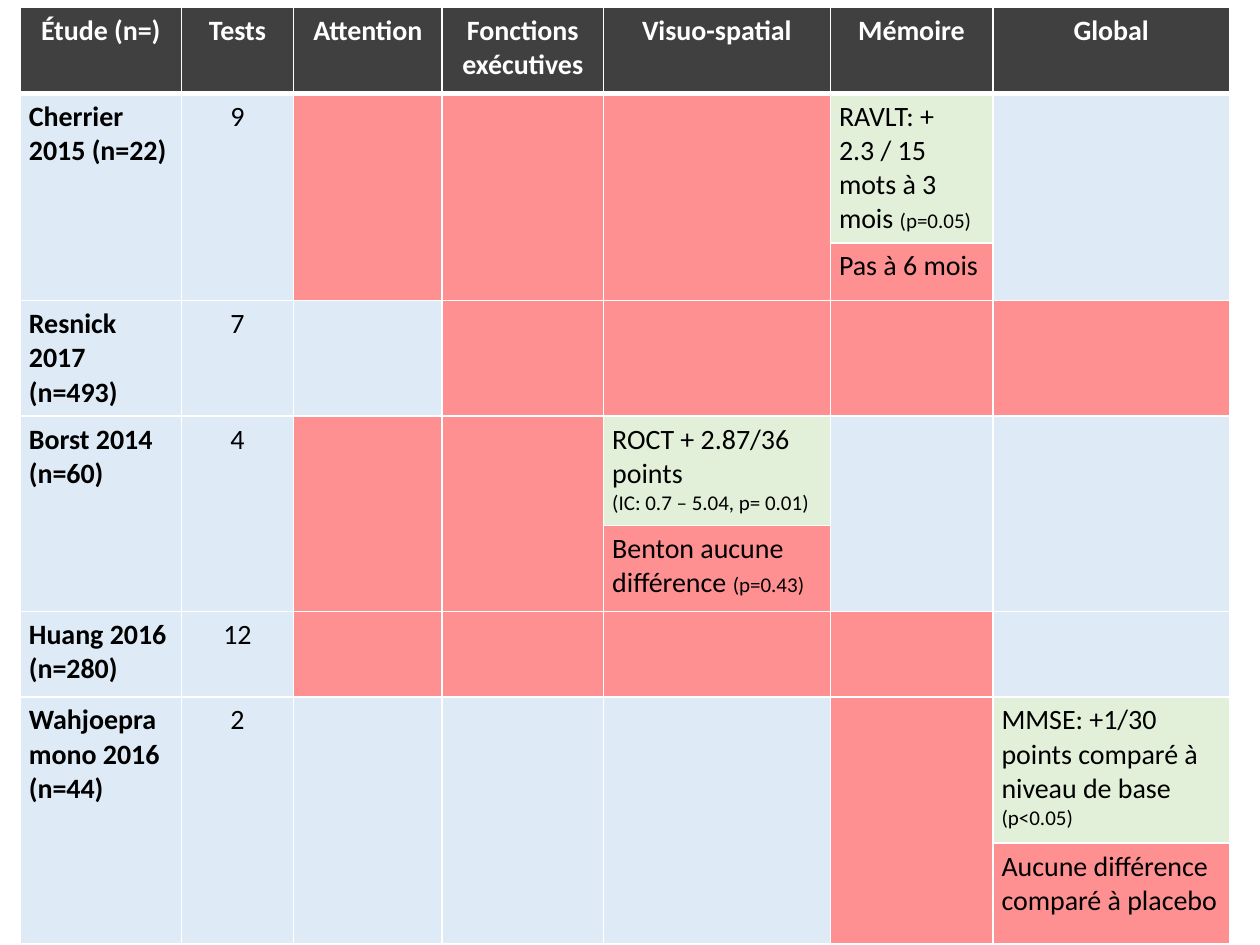
"""Build a slide with a table of cognitive results by study."""
from dataclasses import dataclass

from lxml import etree
from pptx import Presentation
from pptx import util as u
from pptx.dml import color
from pptx.enum import text
from pptx.oxml import ns


@dataclass(frozen=True)
class Theme:
    """Hold the colours, font and type sizes of the slide."""
    font: str = "Calibri"
    body: int = 16
    small: int = 12
    header: str = "404040"
    untested: str = "DEEBF7"
    negative: str = "FF9091"
    positive: str = "E2F0D9"
    white: str = "FFFFFF"
    black: str = "000000"


THEME = Theme()
UNTESTED, NEGATIVE = "untested", "negative"
COLUMN_WIDTHS = [1.28, 0.89, 1.18, 1.28, 1.8, 1.29, 1.88]
ROW_HEIGHTS = [0.68, 0.87, 0.46, 0.68, 0.87, 0.68, 0.68, 1.16, 0.8]
HEADINGS = ["Étude (n=)", "Tests", "Attention", "Fonctions exécutives",
            "Visuo-spatial", "Mémoire", "Global"]


@dataclass(frozen=True)
class Mixed:
    """Pair a positive finding with a negative one, as paragraphs of runs."""
    gain: list
    no_gain: list


def small(words):
    """Mark words as a run in the small size."""
    return words, THEME.small


RAVLT = Mixed([["RAVLT: + 2.3 / 15 mots à 3 mois ", small("(p=0.05)")]],
              [["Pas à 6 mois"]])
ROCT = Mixed([["ROCT + 2.87/36 points"], [small("(IC: 0.7 – 5.04, p= 0.01)")]],
             [["Benton aucune différence ", small("(p=0.43)")]])
MMSE = Mixed([["MMSE: +1/30 points comparé à niveau de base"], [small("(p<0.05)")]],
             [["Aucune différence comparé à placebo"]])

STUDIES = [
    ("Cherrier 2015 (n=22)", "9", [NEGATIVE, NEGATIVE, NEGATIVE, RAVLT, UNTESTED]),
    ("Resnick 2017 (n=493)", "7", [UNTESTED, NEGATIVE, NEGATIVE, NEGATIVE, NEGATIVE]),
    ("Borst 2014 (n=60)", "4", [NEGATIVE, NEGATIVE, ROCT, UNTESTED, UNTESTED]),
    ("Huang 2016 (n=280)", "12", [NEGATIVE, NEGATIVE, NEGATIVE, NEGATIVE, UNTESTED]),
    ("Wahjoepramono 2016 (n=44)", "2", [UNTESTED, UNTESTED, UNTESTED, NEGATIVE, MMSE]),
]


def set_borders(cell, top, bottom):
    """Draw white cell borders with the given top and bottom widths."""
    properties = cell._tc.get_or_add_tcPr()
    for side, points in (("L", 1), ("R", 1), ("T", top), ("B", bottom)):
        line = etree.SubElement(properties, ns.qn(f"a:ln{side}"), w=str(u.Pt(points)))
        fill = etree.SubElement(line, ns.qn("a:solidFill"))
        etree.SubElement(fill, ns.qn("a:srgbClr"), val=THEME.white)


def paint(cell, fill):
    """Fill a cell and set its margins."""
    cell.fill.solid()
    cell.fill.fore_color.rgb = color.RGBColor.from_string(fill)
    cell.margin_left = cell.margin_right = u.Inches(0.07)
    cell.margin_top = cell.margin_bottom = u.Inches(0.05)


def write(cell, paragraphs, ink=THEME.black, bold=False, centred=False):
    """Write paragraphs of runs into a cell."""
    frame = cell.text_frame
    for index, runs in enumerate(paragraphs):
        paragraph = frame.add_paragraph() if index else frame.paragraphs[0]
        if centred:
            paragraph.alignment = text.PP_ALIGN.CENTER
        for item in runs:
            words, size = (item, THEME.body) if isinstance(item, str) else item
            run = paragraph.add_run()
            run.text = words
            run.font.name = THEME.font
            run.font.size = u.Pt(size)
            run.font.bold = bold
            run.font.color.rgb = color.RGBColor.from_string(ink)


def add_grid(slide):
    """Add the empty table with its columns, rows and borders."""
    frame = slide.shapes.add_table(
        len(ROW_HEIGHTS), len(COLUMN_WIDTHS), u.Inches(0.16), u.Inches(0.06),
        u.Inches(sum(COLUMN_WIDTHS)), u.Inches(sum(ROW_HEIGHTS)))
    grid = frame.table
    grid.horz_banding = False
    for column, width in zip(grid.columns, COLUMN_WIDTHS):
        column.width = u.Inches(width)
    for index, (row, height) in enumerate(zip(grid.rows, ROW_HEIGHTS)):
        row.height = u.Inches(height)
        for cell in row.cells:
            set_borders(cell, 3 if index == 1 else 1, 3 if index == 0 else 1)
            paint(cell, THEME.untested)
    return grid


def fill_header(grid):
    """Write the column headings."""
    for cell, heading in zip(grid.rows[0].cells, HEADINGS):
        paint(cell, THEME.header)
        write(cell, [[heading]], THEME.white, bold=True, centred=True)


def fill_study(grid, top, study):
    """Write one study from the given row and return the next free row."""
    name, tests, outcomes = study
    last = top + any(isinstance(outcome, Mixed) for outcome in outcomes)
    for column, outcome in enumerate([UNTESTED, UNTESTED] + outcomes):
        first = grid.cell(top, column)
        second = grid.cell(last, column)
        if isinstance(outcome, Mixed):
            paint(first, THEME.positive)
            write(first, outcome.gain)
            paint(second, THEME.negative)
            write(second, outcome.no_gain)
            continue
        paint(first, getattr(THEME, outcome))
        if last > top:
            first.merge(second)
    write(grid.cell(top, 0), [[name]], bold=True)
    write(grid.cell(top, 1), [[tests]], centred=True)
    return last + 1


def main():
    """Build and save the slide."""
    deck = Presentation()
    deck.slide_width, deck.slide_height = u.Inches(10), u.Inches(7.5)
    slide = deck.slides.add_slide(deck.slide_layouts[6])
    grid = add_grid(slide)
    fill_header(grid)
    row = 1
    for study in STUDIES:
        row = fill_study(grid, row, study)
    deck.save("out.pptx")


if __name__ == "__main__":
    main()
